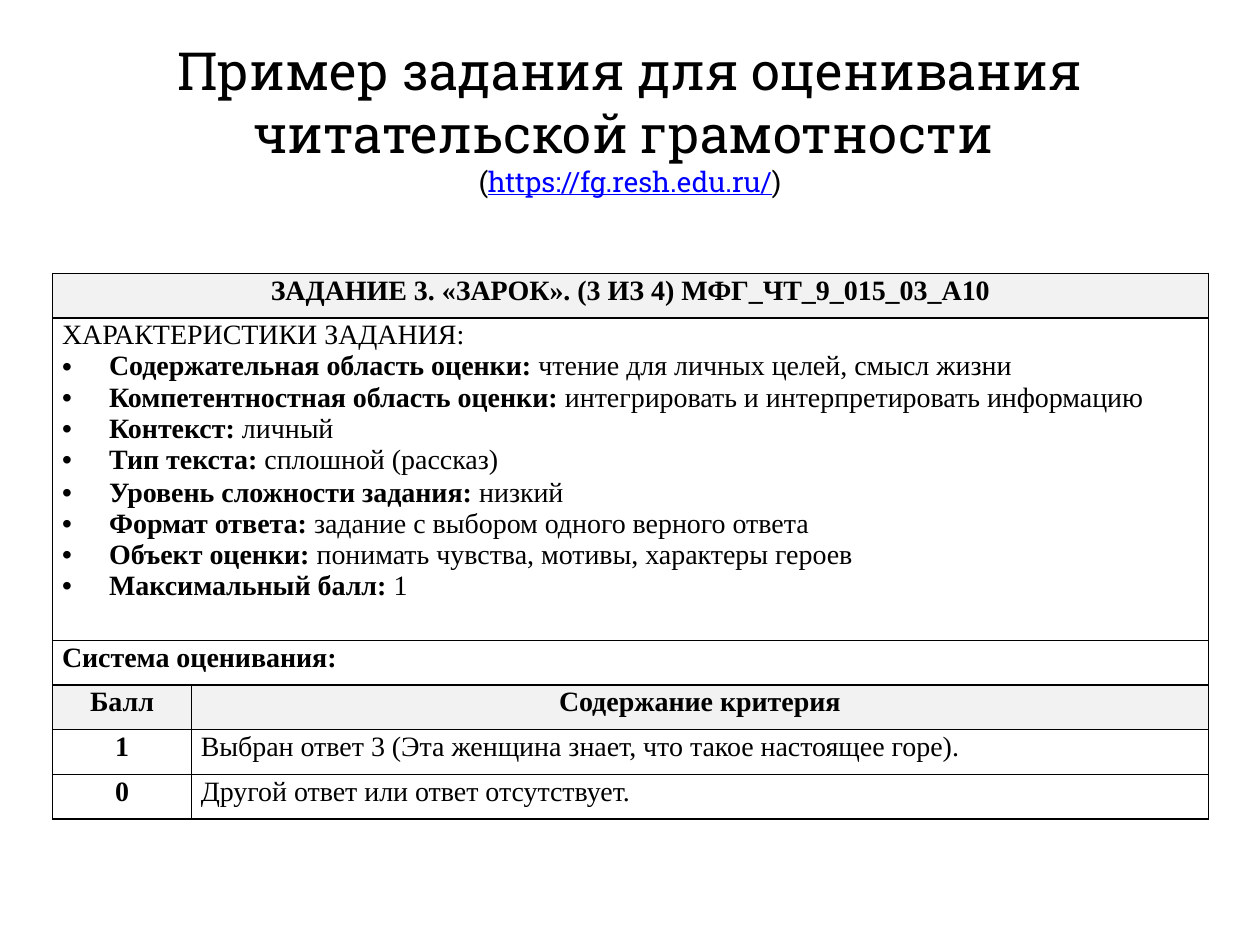
from dataclasses import dataclass

from lxml.etree import SubElement as Sub
from pptx import Presentation
from pptx.dml.color import RGBColor as Rgb
from pptx.enum.text import MSO_ANCHOR as Anchor, MSO_AUTO_SIZE as Fit, PP_ALIGN as Align
from pptx.oxml.ns import qn
from pptx.util import Cm, Pt


@dataclass(frozen=True)
class Theme:
    head: str = "Roboto Slab"
    body: str = "Times New Roman"
    big: int = 30
    small: int = 16
    ink: str = "000000"
    link: str = "0000FF"
    paper: str = "FFFFFF"
    shade: str = "F2F2F2"
    edge: int = 1


@dataclass(frozen=True)
class Line:
    """A paragraph: a bold label, then plain text."""
    label: str = ""
    plain: str = ""
    mid: bool = False
    dot: bool = False
    gap: float = 1.06


@dataclass(frozen=True)
class Row:
    cells: tuple
    high: float = 0.9
    fill: str = Theme.paper


THEME = Theme()
WIDE = (2.8, 20.5)
TITLE = "Пример задания для оценивания\nчитательской грамотности \n"
LINK = ("(", "https://fg.resh.edu.ru/", ")")
TRAITS = (
    ("Содержательная область оценки:", " чтение для личных целей, смысл жизни"),
    ("Компетентностная область оценки:", " интегрировать и интерпретировать информацию"),
    ("Контекст:", " личный"),
    ("Тип текста:", " сплошной (рассказ)"),
    ("Уровень сложности задания:", " низкий", 1.06),
    ("Формат ответа:", " задание с выбором одного верного ответа"),
    ("Объект оценки:", " понимать чувства, мотивы, характеры героев"),
    ("Максимальный балл:", " 1"),
)


def trait(label: str, plain: str, gap: float = 1.0) -> Line:
    return Line(label, plain, dot=True, gap=gap)


def cell(label: str = "", plain: str = "", mid: bool = False) -> tuple:
    return (Line(label, plain, mid),)


ROWS = (
    Row((cell("ЗАДАНИЕ 3. «ЗАРОК». (3 ИЗ 4) МФГ_ЧТ_9_015_03_А10", mid=True),),
        fill=THEME.shade),
    Row((cell(plain="ХАРАКТЕРИСТИКИ ЗАДАНИЯ:") + tuple(trait(*t) for t in TRAITS),), 6.5),
    Row((cell("Система оценивания:"),)),
    Row((cell("Балл", mid=True), cell("Содержание критерия", mid=True)), fill=THEME.shade),
    Row((cell("1", mid=True),
         cell(plain="Выбран ответ 3 (Эта женщина знает, что такое настоящее горе)."))),
    Row((cell("0", mid=True), cell(plain="Другой ответ или ответ отсутствует."))),
)


def style(run, face: str, size: int, ink: str = THEME.ink, bold: bool = False) -> None:
    font = run.font
    font.name, font.size, font.bold = face, Pt(size), bold
    font.color.rgb = Rgb.from_string(ink)


def add_title(slide) -> None:
    box = slide.shapes.title
    box.left, box.top, box.width, box.height = Cm(0), Cm(0.64), Cm(25.4), Cm(3.5)
    frame = box.text_frame
    frame.text = TITLE
    frame.word_wrap = True
    frame.auto_size = Fit.SHAPE_TO_FIT_TEXT
    frame.vertical_anchor = Anchor.TOP
    *heads, last = frame.paragraphs
    for para in frame.paragraphs:
        para.alignment = Align.CENTER
    for para in heads:
        style(para.runs[0], THEME.head, THEME.big)
    for text in LINK:
        run = last.add_run()
        run.text = text
        site = text.startswith("http")
        style(run, THEME.head, THEME.small, THEME.link if site else THEME.ink)
        run.font.underline = site


def add_line(para, line: Line) -> None:
    para.alignment = Align.CENTER if line.mid else Align.LEFT
    para.line_spacing = line.gap
    if line.dot:
        props = para._p.get_or_add_pPr()
        props.set("marL", str(Cm(0.95)))
        props.set("indent", str(-Cm(0.95)))
        Sub(props, qn("a:buFont"), typeface="Arial")
        Sub(props, qn("a:buChar"), char="•")
    for text, bold in ((line.label, True), (line.plain, False)):
        if text:
            run = para.add_run()
            run.text = text
            style(run, THEME.body, THEME.small, bold=bold)


def add_edges(box) -> None:
    props = box._tc.get_or_add_tcPr()
    for side in "LRTB":
        edge = Sub(props, qn(f"a:ln{side}"), w=str(Pt(THEME.edge)))
        Sub(Sub(edge, qn("a:solidFill")), qn("a:srgbClr"), val=THEME.ink)


def fill_cell(box, lines: tuple) -> None:
    frame = box.text_frame
    frame.text = "\n" * (len(lines) - 1)
    for para, line in zip(frame.paragraphs, lines):
        add_line(para, line)


def add_grid(slide) -> None:
    high = sum(row.high for row in ROWS)
    grid = slide.shapes.add_table(len(ROWS), len(WIDE), Cm(1.06), Cm(5.51),
                                  Cm(sum(WIDE)), Cm(high)).table
    for col, wide in zip(grid.columns, WIDE):
        col.width = Cm(wide)
    for i, row in enumerate(ROWS):
        grid.rows[i].height = Cm(row.high)
        for box in grid.rows[i].cells:
            box.margin_left = box.margin_right = Cm(0.19)
            box.margin_top = box.margin_bottom = 0
            add_edges(box)
            box.fill.solid()
            box.fill.fore_color.rgb = Rgb.from_string(row.fill)
        if len(row.cells) == 1:
            grid.cell(i, 0).merge(grid.cell(i, 1))
        for j, lines in enumerate(row.cells):
            fill_cell(grid.cell(i, j), lines)


def main() -> None:
    deck = Presentation()
    deck.slide_width, deck.slide_height = Cm(25.4), Cm(19.05)
    slide = deck.slides.add_slide(deck.slide_layouts[5])
    add_title(slide)
    add_grid(slide)
    deck.save("out.pptx")


if __name__ == "__main__":
    main()
